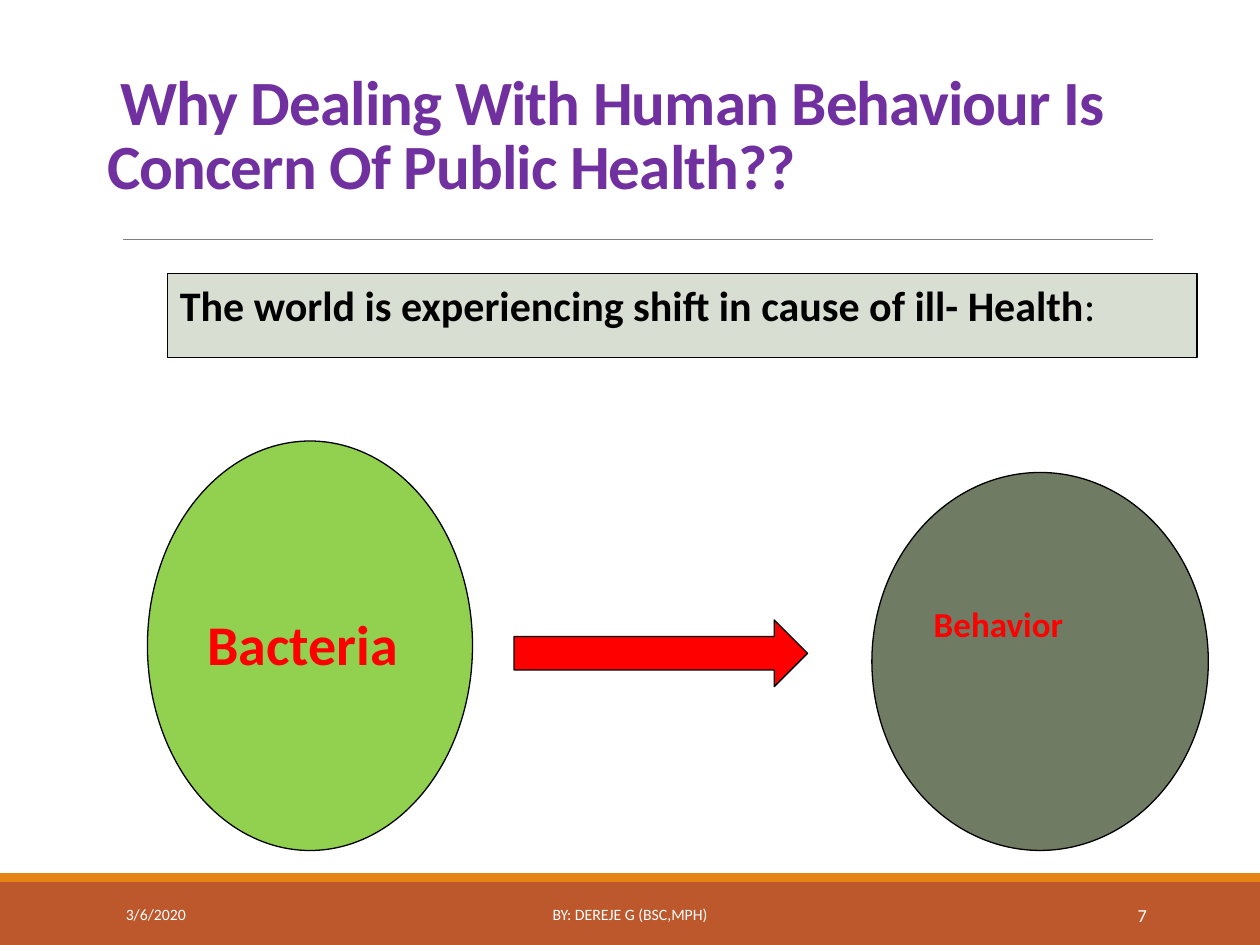
from lxml import etree
from pptx import Presentation
from pptx.dml.color import RGBColor
from pptx.enum.shapes import MSO_CONNECTOR, MSO_SHAPE
from pptx.enum.text import MSO_ANCHOR, MSO_AUTO_SIZE, PP_ALIGN
from pptx.oxml.ns import qn
from pptx.util import Inches, Pt

RECTANGLE, OVAL, ARROW = MSO_SHAPE.RECTANGLE, MSO_SHAPE.OVAL, MSO_SHAPE.RIGHT_ARROW
STRAIGHT = MSO_CONNECTOR.STRAIGHT
TOP, MIDDLE, BOTTOM = MSO_ANCHOR.TOP, MSO_ANCHOR.MIDDLE, MSO_ANCHOR.BOTTOM
LEFT, CENTER, RIGHT = PP_ALIGN.LEFT, PP_ALIGN.CENTER, PP_ALIGN.RIGHT
NO_AUTOFIT = MSO_AUTO_SIZE.NONE

BLACK, WHITE, RED, PURPLE = "000000", "FFFFFF", "FF0000", "7030A0"


def color(value):
    return RGBColor.from_string(value)


class SlideBuilder:
    font = "Calibri"
    outline = 0.75

    def __init__(self, slide):
        self.slide = slide

    def place(self, item, left, top, width, height):
        item.left, item.top = Inches(left), Inches(top)
        item.width, item.height = Inches(width), Inches(height)

    def paint(self, shape, fill, line=None):
        shape.fill.solid()
        shape.fill.fore_color.rgb = color(fill)
        if line:
            shape.line.color.rgb = color(line)
            shape.line.width = Pt(self.outline)
        else:
            shape.line.fill.background()

    def set_text(self, shape, text, size, ink, bold=False, align=LEFT, anchor=TOP, inset=0.05):
        frame = shape.text_frame
        frame.text = text
        frame.word_wrap = True
        frame.auto_size = NO_AUTOFIT
        frame.vertical_anchor = anchor
        frame.margin_top = Inches(inset)
        para = frame.paragraphs[0]
        para.alignment = align
        self.style(para.runs[0], size, ink, bold)
        return para

    def style(self, span, size, ink, bold):
        span.font.name, span.font.size = self.font, Pt(size)
        span.font.bold = bold
        span.font.color.rgb = color(ink)

    def shape(self, kind, area, fill, line=None):
        shape = self.slide.shapes.add_shape(kind, *map(Inches, area))
        shape.shadow.inherit = False
        self.paint(shape, fill, line)
        return shape

    def rule(self, left, right, top, ink, width):
        line = self.slide.shapes.add_connector(
            STRAIGHT, Inches(left), Inches(top), Inches(right), Inches(top))
        line.line.color.rgb = color(ink)
        line.line.width = Pt(width)
        etree.SubElement(line._element.spPr, qn("a:effectLst"))

    def label(self, area, text, size, align):
        box = self.slide.shapes.add_textbox(*map(Inches, area))
        self.set_text(box, text, size, WHITE, align=align, anchor=MIDDLE)

    def title(self, area, text, size, ink):
        title = self.slide.shapes.title
        self.place(title, *area)
        para = self.set_text(title, text, size, ink, bold=True, anchor=BOTTOM)
        para.line_spacing = 0.85
        para.runs[0].font._element.set("spc", "-50")

    def body_oval(self, area, text, size, ink, fill, inset):
        body = self.slide.placeholders[1]
        self.place(body, *area)
        geometry = etree.SubElement(body._element.spPr, qn("a:prstGeom"), prst="ellipse")
        etree.SubElement(geometry, qn("a:avLst"))
        self.paint(body, fill, BLACK)
        para = self.set_text(body, text, size, ink, bold=True, inset=inset)
        para.line_spacing, para.space_before = 0.9, Pt(0)
        # No bullet, no hanging indent
        properties = para._p.get_or_add_pPr()
        properties.set("marL", "0")
        properties.set("indent", "0")
        etree.SubElement(properties, qn("a:buNone"))


def main():
    deck = Presentation()
    deck.slide_width, deck.slide_height = Inches(10), Inches(7.5)
    builder = SlideBuilder(deck.slides.add_slide(deck.slide_layouts[1]))

    # Footer bands and title rule
    builder.shape(RECTANGLE, (0, 7, 10, 0.5), "BD582C")
    builder.shape(RECTANGLE, (0, 6.93, 10, 0.07), "E48312")
    builder.rule(0.98, 9.15, 1.9, "808080", 0.5)

    # Title
    builder.title((0.75, 0.31, 9.2, 1.35),
                  " Why Dealing With Human Behaviour Is Concern Of Public Health??", 36, PURPLE)

    # Statement
    statement = builder.shape(RECTANGLE, (1.33, 2.17, 8.17, 0.67), "D8DED1", BLACK)
    para = builder.set_text(statement, "The world is experiencing shift in cause of ill- Health",
                            24, BLACK, bold=True)
    colon = para.add_run()
    colon.text = ":"
    builder.style(colon, 24, BLACK, False)

    # Shift from bacteria to behavior
    bacteria = builder.shape(OVAL, (1.17, 3.5, 2.58, 3.25), "92D050", BLACK)
    builder.set_text(bacteria, "Bacteria", 32, RED, bold=True, inset=0.86)
    builder.shape(ARROW, (4.08, 4.92, 2.33, 0.53), RED, BLACK)
    builder.body_oval((6.92, 3.75, 2.67, 3), "Behavior", 20, RED, "6F7B63", inset=0.63)

    # Footer
    builder.label((0.9, 7.06, 2.03, 0.4), "3/6/2020", 9, LEFT)
    builder.label((3.02, 7.06, 3.96, 0.4), "BY: DEREJE G (BSC,MPH)", 9, CENTER)
    builder.label((8.12, 7.06, 1.08, 0.4), "7", 10.5, RIGHT)

    deck.save("out.pptx")


if __name__ == "__main__":
    main()
